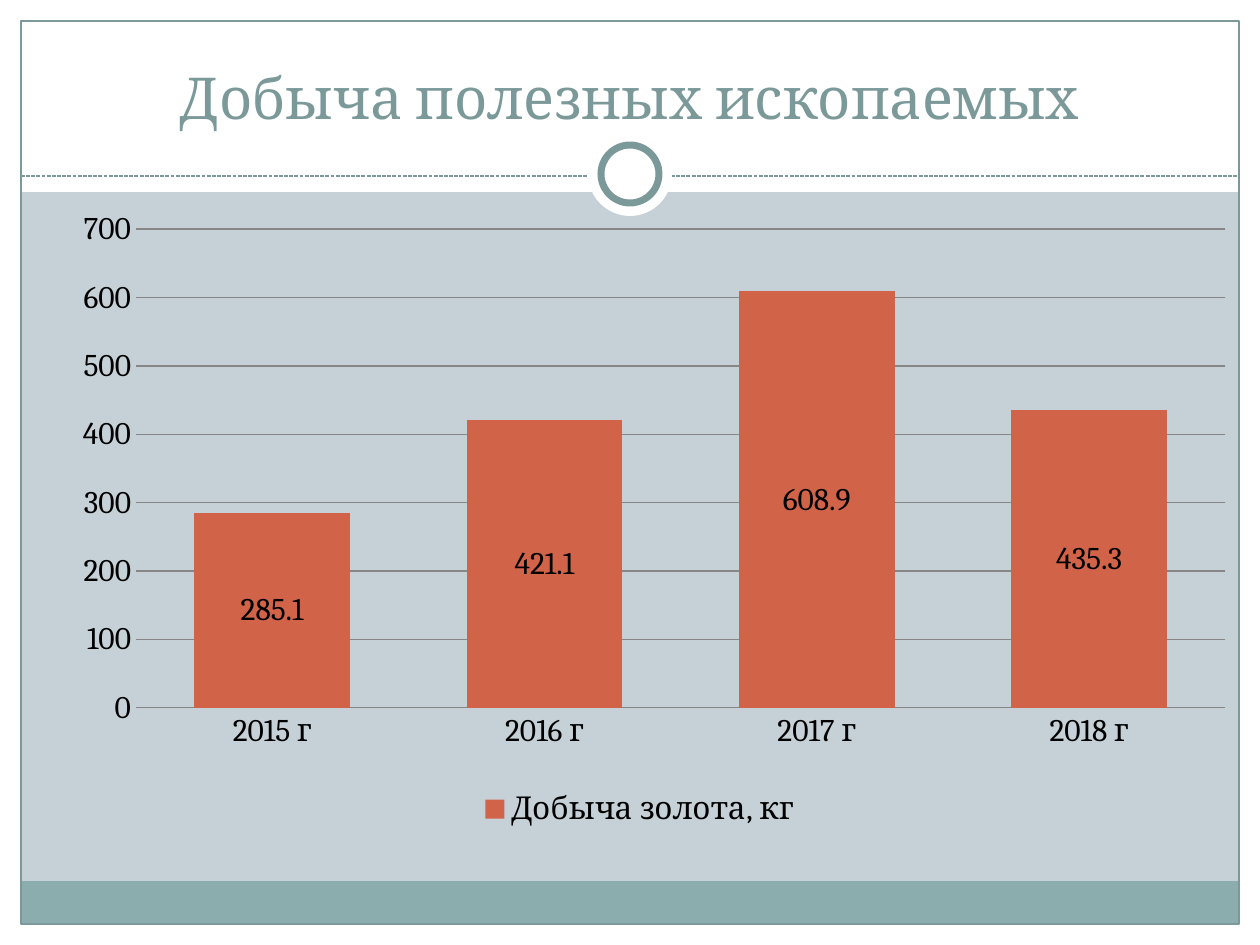
"""Build a slide with a column chart of gold mining by year."""
from pptx import Presentation
from pptx.chart.data import CategoryChartData
from pptx.dml.color import RGBColor
from pptx.enum.chart import XL_CHART_TYPE, XL_LABEL_POSITION, XL_LEGEND_POSITION, XL_TICK_MARK
from pptx.enum.dml import MSO_LINE
from pptx.enum.shapes import MSO_CONNECTOR, MSO_SHAPE
from pptx.enum.text import MSO_ANCHOR, PP_ALIGN
from pptx.oxml import parse_xml
from pptx.oxml.ns import nsdecls
from pptx.util import Pt

RECT, OVAL = MSO_SHAPE.RECTANGLE, MSO_SHAPE.OVAL
STRAIGHT = MSO_CONNECTOR.STRAIGHT
DASH = MSO_LINE.SQUARE_DOT
BOTTOM, CENTER = MSO_ANCHOR.BOTTOM, PP_ALIGN.CENTER
STACKED = XL_CHART_TYPE.COLUMN_STACKED
LEGEND_BOTTOM = XL_LEGEND_POSITION.BOTTOM
LABEL_CENTER = XL_LABEL_POSITION.CENTER
NO_TICK = XL_TICK_MARK.NONE

WHITE = RGBColor(0xFF, 0xFF, 0xFF)
BLACK = RGBColor(0x00, 0x00, 0x00)
PALE = RGBColor(0xC5, 0xD1, 0xD7)
TEAL = RGBColor(0x8C, 0xAD, 0xAE)
SLATE = RGBColor(0x7C, 0x99, 0x9A)
ORANGE = RGBColor(0xD1, 0x63, 0x49)
GRID = RGBColor(0x86, 0x86, 0x86)
FONT = "Cambria"

TITLE = "Добыча полезных ископаемых"
SERIES = "Добыча золота, кг"
OUTPUT = {"2015 г": 285.1, "2016 г": 421.1, "2017 г": 608.9, "2018 г": 435.3}

W, H, MARGIN = 1260, 945, 21
HEADER_H, FOOTER_H = 192, 43
RULE_Y, RING_Y = 176, 174
INNER_W, INNER_H = W - 2 * MARGIN, H - 2 * MARGIN
BANDS = [
    (0, H - MARGIN, W, MARGIN, WHITE),
    (0, 0, W, HEADER_H, WHITE),
    (0, 0, MARGIN, H, WHITE),
    (W - MARGIN, 0, MARGIN, H, WHITE),
    (MARGIN, H - MARGIN - FOOTER_H, INNER_W, FOOTER_H, TEAL),
]
RINGS = [(84, None, 0), (58, SLATE, 4)]
TITLE_BOX = (42, 32, 1176, 105)
CHART_BOX = (54, 204, 1172, 630)
PLOT = {"x": 0.07, "y": 0.04, "w": 0.93, "h": 0.76}


def px(*values):
    return [round(v * 914400 / 126) for v in values]


def add_shape(s, kind, box, fill=None, line=None, width=0.75):
    sp = s.shapes.add_shape(kind, *px(*box))
    sp.shadow.inherit = False
    if fill is None:
        sp.fill.background()
    else:
        sp.fill.solid()
        sp.fill.fore_color.rgb = fill
    if line is None:
        sp.line.fill.background()
    else:
        sp.line.color.rgb = line
        sp.line.width = Pt(width)
    return sp


def add_text(s, text, box, size, color, align, anchor):
    tf = s.shapes.add_textbox(*px(*box)).text_frame
    tf.word_wrap = True
    tf.vertical_anchor = anchor
    p = tf.paragraphs[0]
    p.alignment = align
    r = p.add_run()
    r.text = text
    r.font.name, r.font.size, r.font.color.rgb = FONT, Pt(size), color


def add_rule(s, y):
    cx = s.shapes.add_connector(STRAIGHT, *px(MARGIN, y, W - MARGIN, y))
    cx.line.color.rgb = SLATE
    cx.line.width = Pt(0.75)
    cx.line.dash_style = DASH
    cx.element.spPr.append(parse_xml(f"<a:effectLst {nsdecls('a')}/>"))


def set_plot_layout(chart):
    area = chart.element.chart.plotArea
    for old in area.findall("{*}layout"):
        area.remove(old)
    modes = "".join(f'<c:{k}Mode val="edge"/>' for k in "xy")
    sizes = "".join(f'<c:{k} val="{v}"/>' for k, v in PLOT.items())
    area.insert(0, parse_xml(
        f"<c:layout {nsdecls('c')}><c:manualLayout>"
        f'<c:layoutTarget val="inner"/>{modes}{sizes}'
        "</c:manualLayout></c:layout>"))


def add_chart(s):
    data = CategoryChartData()
    data.categories = list(OUTPUT)
    data.add_series(SERIES, list(OUTPUT.values()))
    chart = s.shapes.add_chart(STACKED, *px(*CHART_BOX), data).chart
    chart.font.name, chart.font.size, chart.font.color.rgb = FONT, Pt(18), BLACK
    chart.has_title = False
    chart.has_legend = True
    chart.legend.position = LEGEND_BOTTOM
    chart.legend.include_in_layout = False
    for axis in (chart.category_axis, chart.value_axis):
        axis.major_tick_mark = axis.minor_tick_mark = NO_TICK
        axis.format.line.color.rgb = GRID
    values = chart.value_axis
    values.format.line.fill.background()
    values.minimum_scale, values.maximum_scale, values.major_unit = 0, 700, 100
    values.major_gridlines.format.line.color.rgb = GRID
    plot = chart.plots[0]
    plot.gap_width, plot.overlap, plot.vary_by_categories = 75, 100, False
    fill = plot.series[0].format.fill
    fill.solid()
    fill.fore_color.rgb = ORANGE
    plot.has_data_labels = True
    plot.data_labels.show_value = True
    plot.data_labels.position = LABEL_CENTER
    set_plot_layout(chart)


def main():
    prs = Presentation()
    prs.slide_width, prs.slide_height = px(W, H)
    s = prs.slides.add_slide(prs.slide_layouts[6])
    s.background.fill.solid()
    s.background.fill.fore_color.rgb = PALE
    for *box, color in BANDS:
        add_shape(s, RECT, box, color)
    add_shape(s, RECT, (MARGIN, MARGIN, INNER_W, INNER_H), line=SLATE)
    add_rule(s, RULE_Y)
    for d, line, width in RINGS:
        box = ((W - d) // 2, RING_Y - d // 2, d, d)
        add_shape(s, OVAL, box, WHITE, line, width)
    add_text(s, TITLE, TITLE_BOX, 33, SLATE, CENTER, BOTTOM)
    add_chart(s)
    prs.save("out.pptx")


if __name__ == "__main__":
    main()
